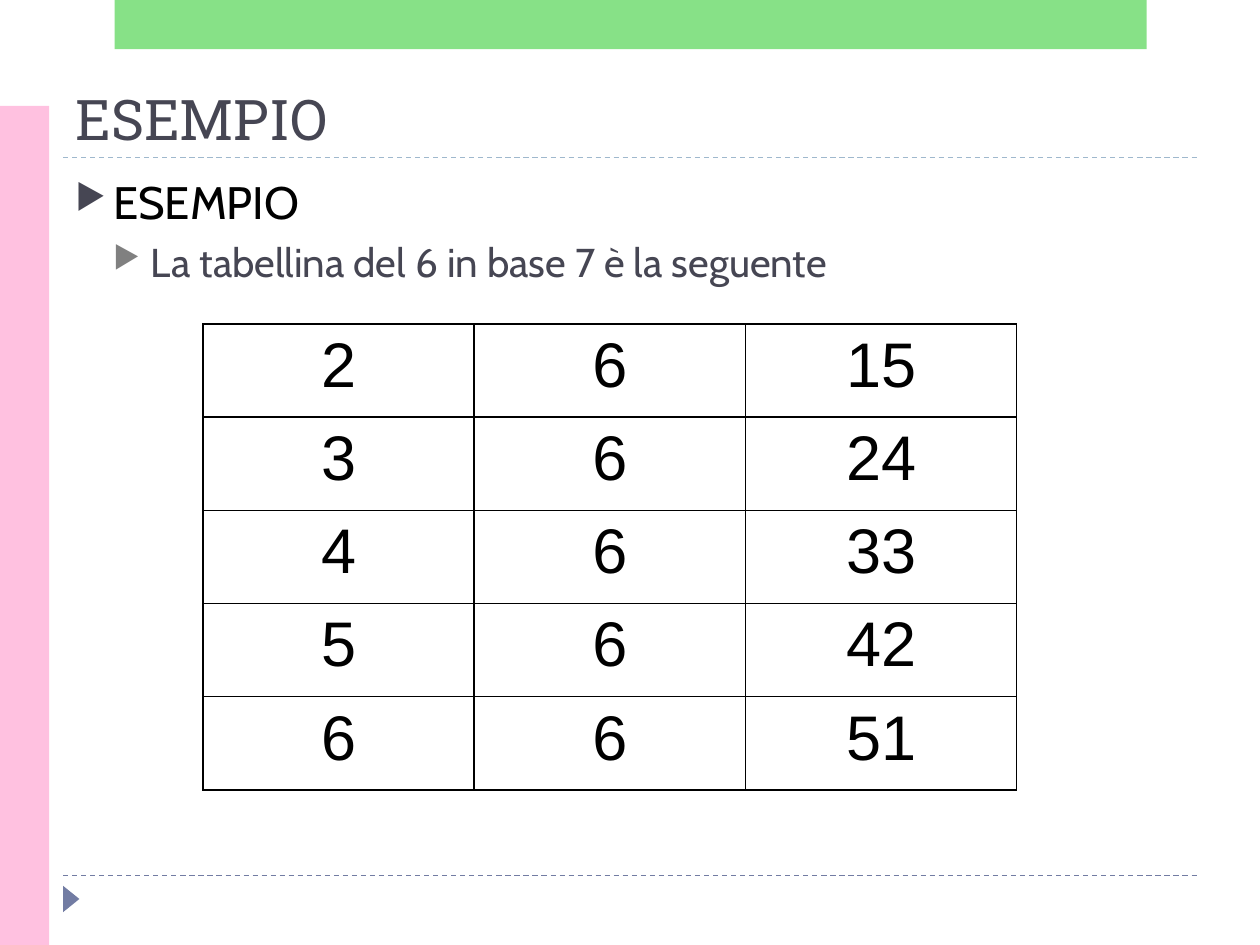
from lxml.etree import SubElement
from pptx import Presentation
from pptx.dml.color import RGBColor
from pptx.enum.dml import MSO_LINE
from pptx.enum.shapes import MSO_CONNECTOR, MSO_SHAPE
from pptx.enum.text import MSO_ANCHOR, PP_ALIGN
from pptx.oxml.ns import qn
from pptx.util import Inches, Pt

COLORS = {
    "title": "464653", "text": "000000", "bullet": "808080",
    "rule": "9FB8CD", "accent": "727CA3",
    "pink": "FFC1E0", "green": "62D862",
}


class PageBuilder:
    """Holds the style and the slide being built."""

    title_font, body_font, table_font = "Roboto Slab", "Cabin", "Arial"

    def __init__(self, page):
        self.page = page

    def color(self, name):
        return RGBColor.from_string(COLORS[name])

    def style(self, paragraph, font, size, color):
        paragraph.font.name = font
        paragraph.font.size = Pt(size)
        paragraph.font.color.rgb = self.color(color)

    def rule(self, y, color):
        line = self.page.shapes.add_connector(
            MSO_CONNECTOR.STRAIGHT, Inches(0.5), Inches(y), Inches(9.5), Inches(y))
        line.line.color.rgb = self.color(color)
        line.line.width = Pt(0.75)
        line.line.dash_style = MSO_LINE.DASH
        SubElement(line._element.spPr, qn("a:effectLst"))

    def shape(self, kind, left, top, width, height, color, rotation=0, opacity=100):
        shape = self.page.shapes.add_shape(
            kind, Inches(left), Inches(top), Inches(width), Inches(height))
        shape.shadow.inherit = False
        shape.rotation = rotation
        shape.fill.solid()
        shape.fill.fore_color.rgb = self.color(color)
        shape.line.fill.background()
        if opacity < 100:
            fill = shape._element.spPr.find(qn("a:solidFill"))
            SubElement(fill[0], qn("a:alpha"), val=str(opacity * 1000))

    def text_frame(self, top, height, anchor):
        box = self.page.shapes.add_textbox(
            Inches(0.5), Inches(top), Inches(9), Inches(height))
        frame = box.text_frame
        frame.word_wrap = True
        frame.vertical_anchor = anchor
        return frame

    def title(self, text):
        paragraph = self.text_frame(0.55, 0.7, MSO_ANCHOR.BOTTOM).paragraphs[0]
        paragraph.text = text
        self.style(paragraph, self.title_font, 32, "title")

    def bullets(self, items):
        frame = self.text_frame(1.33, 5.4, MSO_ANCHOR.TOP)
        for level, (text, size, color, bullet_color) in enumerate(items):
            paragraph = frame.add_paragraph() if level else frame.paragraphs[0]
            paragraph.text = text
            paragraph.level = level
            if level:
                paragraph.space_before = Pt(5)
            properties = paragraph._p.get_or_add_pPr()
            properties.set("marL", str(Inches(0.3 * (level + 1))))
            properties.set("indent", str(Inches(-0.3)))
            bullet = SubElement(properties, qn("a:buClr"))
            SubElement(bullet, qn("a:srgbClr"), val=COLORS[bullet_color])
            SubElement(properties, qn("a:buSzPct"), val="76000")
            SubElement(properties, qn("a:buChar"), char="▶")
            self.style(paragraph, self.body_font, size, color)

    def cell_borders(self, cell):
        properties = cell._tc.get_or_add_tcPr()
        for position, side in enumerate(("lnL", "lnR", "lnT", "lnB")):
            line = properties.makeelement(qn(f"a:{side}"), {"w": str(Pt(1))})
            fill = SubElement(line, qn("a:solidFill"))
            SubElement(fill, qn("a:srgbClr"), val=COLORS["text"])
            properties.insert(position, line)

    def table(self, rows, left, top, width, height):
        table = self.page.shapes.add_table(
            len(rows), len(rows[0]), Inches(left), Inches(top),
            Inches(width), Inches(height)).table
        table.first_row = table.horz_banding = False
        for row, values in enumerate(rows):
            for column, value in enumerate(values):
                cell = table.cell(row, column)
                cell.fill.background()
                self.cell_borders(cell)
                paragraph = cell.text_frame.paragraphs[0]
                paragraph.text = value
                paragraph.alignment = PP_ALIGN.CENTER
                self.style(paragraph, self.table_font, 36, "text")


def main():
    deck = Presentation()
    deck.slide_width, deck.slide_height = Inches(10), Inches(7.5)
    builder = PageBuilder(deck.slides.add_slide(deck.slide_layouts[6]))

    # Frame: dashed rules, corner arrow and colour bars
    builder.rule(6.95, "accent")
    builder.rule(1.25, "rule")
    builder.shape(MSO_SHAPE.ISOSCELES_TRIANGLE, 0.46, 7.07, 0.21, 0.13,
                  "accent", rotation=90)
    builder.shape(MSO_SHAPE.RECTANGLE, 0, 0.84, 0.39, 6.66, "pink")
    builder.shape(MSO_SHAPE.RECTANGLE, 0.91, 0, 8.19, 0.39, "green", opacity=76)

    # Title and body text
    builder.title("ESEMPIO")
    builder.bullets([
        ("ESEMPIO", 26, "text", "title"),
        ("La tabellina del 6 in base 7 è la seguente", 23, "title", "bullet"),
    ])

    # Six times table, with products written in base 7
    products = ["15", "24", "33", "42", "51"]
    rows = [(str(factor), "6", product)
            for factor, product in enumerate(products, start=2)]
    builder.table(rows, 1.61, 2.57, 6.46, 3.7)

    deck.save("out.pptx")


if __name__ == "__main__":
    main()
